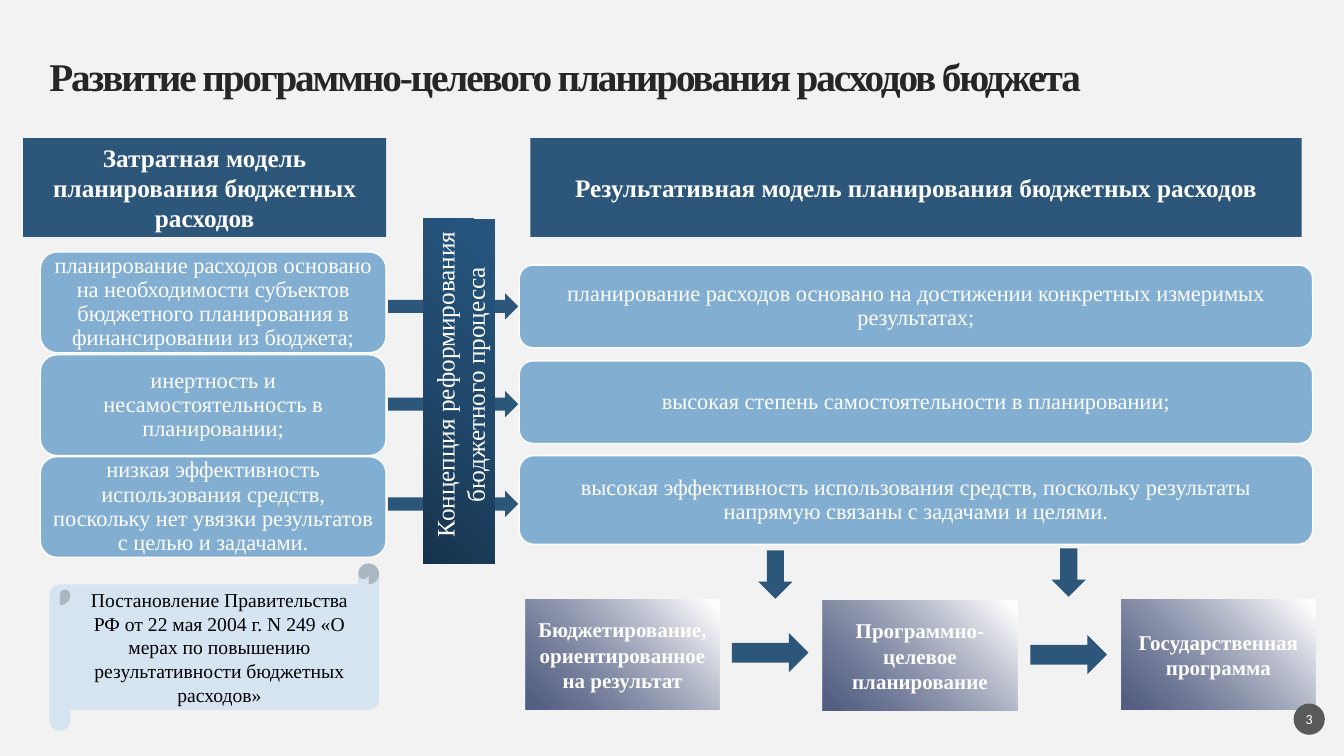
from dataclasses import dataclass

from lxml import etree
from pptx import Presentation
from pptx.dml.color import RGBColor
from pptx.enum.shapes import MSO_SHAPE
from pptx.enum.text import MSO_ANCHOR, MSO_AUTO_SIZE, PP_ALIGN
from pptx.oxml import parse_xml
from pptx.oxml.ns import nsdecls
from pptx.util import Inches, Pt

RECTANGLE = MSO_SHAPE.RECTANGLE
ROUNDED = MSO_SHAPE.ROUNDED_RECTANGLE
RIGHT_ARROW = MSO_SHAPE.RIGHT_ARROW
DOWN_ARROW = MSO_SHAPE.DOWN_ARROW
SCROLL = MSO_SHAPE.HORIZONTAL_SCROLL
OVAL = MSO_SHAPE.OVAL
MIDDLE = MSO_ANCHOR.MIDDLE
CENTER = PP_ALIGN.CENTER
LEFT = PP_ALIGN.LEFT
NO_AUTOFIT = MSO_AUTO_SIZE.NONE


@dataclass(frozen=True)
class Theme:
    background: str = "F2F2F2"
    dark: str = "2C567A"
    light: str = "82AED2"
    scroll: str = "D5E4F0"
    badge: str = "595959"
    white: str = "FFFFFF"
    black: str = "000000"
    title: str = "262626"
    concept_stops: tuple = ((0, "17334C", 100), (50, "20496C", 100), (100, "265680", 100))
    concept_focus: str = 'l="0" t="100000" r="100000" b="0"'
    stage_stops: tuple = ((4, "FFFFFF", 100), (100, "0D1D51", 71))
    stage_focus: str = 'l="100000" t="0" r="0" b="100000"'
    font: str = "Times New Roman"
    number_font: str = "Calibri"
    title_size: int = 28
    heading_size: int = 18
    body_size: int = 16
    stage_size: int = 15
    note_size: int = 14
    number_size: int = 10


theme = Theme()


def write_text(shape, text, size, color=theme.white, font=theme.font, bold=False,
               align=CENTER, line_spacing=1.0, inset=None):
    frame = shape.text_frame
    frame.word_wrap = True
    frame.auto_size = NO_AUTOFIT
    frame.vertical_anchor = MIDDLE
    if inset is not None:
        frame.margin_left = frame.margin_right = Inches(inset)
        frame.margin_top = frame.margin_bottom = Inches(inset)
    paragraph = frame.paragraphs[0]
    paragraph.alignment = align
    paragraph.line_spacing = line_spacing
    run = paragraph.add_run()
    run.text = text
    run.font.name = font
    run.font.size = Pt(size)
    run.font.bold = bold
    run.font.color.rgb = RGBColor.from_string(color)
    return run


def add_box(kind, left, top, width, height, fill=theme.dark, border=None, stops=None, focus=None):
    shape = slide.shapes.add_shape(kind, Inches(left), Inches(top), Inches(width), Inches(height))
    shape.shadow.inherit = False
    if border:
        shape.line.color.rgb = RGBColor.from_string(border)
        shape.line.width = Pt(1)
    else:
        shape.line.fill.background()
    if not stops:
        shape.fill.solid()
        shape.fill.fore_color.rgb = RGBColor.from_string(fill)
        return shape
    gradient = parse_xml(
        f'<a:gradFill {nsdecls("a")} rotWithShape="1"><a:gsLst/>'
        f'<a:path path="circle"><a:fillToRect {focus}/></a:path></a:gradFill>')
    namespace = "{" + gradient.nsmap["a"] + "}"
    for position, color, opacity in stops:
        stop = etree.SubElement(gradient[0], namespace + "gs", pos=str(position * 1000))
        tone = etree.SubElement(stop, namespace + "srgbClr", val=color)
        if opacity < 100:
            etree.SubElement(tone, namespace + "alpha", val=str(opacity * 1000))
    shape._element.spPr.find(namespace + "prstGeom").addnext(gradient)
    return shape


presentation = Presentation()
presentation.slide_width = Inches(13.33)
presentation.slide_height = Inches(7.5)
slide = presentation.slides.add_slide(presentation.slide_layouts[5])
slide.background.fill.solid()
slide.background.fill.fore_color.rgb = RGBColor.from_string(theme.background)

title = slide.shapes.title
title.left, title.top = Inches(0.49), Inches(0.23)
title.width, title.height = Inches(12), Inches(1.11)
title_run = write_text(title, "Развитие программно-целевого планирования расходов бюджета",
                       theme.title_size, color=theme.title, bold=True, align=LEFT,
                       line_spacing=0.9, inset=0)
title_run.font._element.set("spc", "-150")

for top in (2.91, 3.88, 4.87):
    add_box(RIGHT_ARROW, 3.85, top, 1.29, 0.26)

add_box(RECTANGLE, 4.2, 2.17, 0.71, 3.42, stops=theme.concept_stops, focus=theme.concept_focus)
concept = slide.shapes.add_textbox(Inches(2.66), Inches(3.46), Inches(3.8), Inches(0.71))
concept.rotation = 270
write_text(concept, "Концепция реформирования бюджетного процесса", theme.heading_size)

headings = (
    (0.23, 3.6, "Затратная модель планирования бюджетных расходов"),
    (5.26, 7.65, "Результативная модель планирования бюджетных расходов"),
)
for left, width, text in headings:
    heading = add_box(RECTANGLE, left, 1.37, width, 0.98)
    write_text(heading, text, theme.heading_size, bold=True)

features = (
    (0.4, 2.5, 3.43, 1, "планирование расходов основано на необходимости субъектов "
     "бюджетного планирования в финансировании из бюджета;"),
    (0.4, 3.52, 3.43, 1, "инертность и несамостоятельность в планировании;"),
    (0.4, 4.53, 3.43, 1, "низкая эффективность использования средств, "
     "поскольку нет увязки результатов с целью и задачами."),
    (5.15, 2.63, 7.87, 0.82, "планирование расходов основано на достижении "
     "конкретных измеримых результатах;"),
    (5.15, 3.58, 7.87, 0.82, "высокая степень самостоятельности в планировании;"),
    (5.15, 4.52, 7.87, 0.88, "высокая эффективность использования средств, "
     "поскольку результаты напрямую связаны с задачами и целями."),
)
for left, top, width, height, text in features:
    feature = add_box(ROUNDED, left, top, width, height, fill=theme.light, border=theme.white)
    write_text(feature, text, theme.body_size, line_spacing=0.9, inset=0.07)

for left, top in ((7.52, 5.46), (10.43, 5.44)):
    add_box(DOWN_ARROW, left, top, 0.34, 0.48)
for left, top in ((7.26, 6.28), (10.22, 6.3)):
    add_box(RIGHT_ARROW, left, top, 0.76, 0.39)

stages = (
    (5.21, 5.95, "Бюджетирование, ориентированное на результат"),
    (8.16, 5.96, "Программно-целевое планирование"),
    (11.12, 5.95, "Государственная программа"),
)
for left, top, text in stages:
    stage = add_box(RECTANGLE, left, top, 1.93, 1.09,
                    stops=theme.stage_stops, focus=theme.stage_focus)
    write_text(stage, text, theme.stage_size, bold=True)

decree = add_box(SCROLL, 0.49, 5.59, 3.27, 1.66, fill=theme.scroll)
write_text(decree, "Постановление Правительства РФ от 22 мая 2004 г. N 249 «О мерах по повышению "
           "результативности бюджетных расходов»", theme.note_size, color=theme.black)

badge = add_box(OVAL, 12.83, 6.98, 0.31, 0.31, fill=theme.badge)
write_text(badge, "3", theme.number_size, font=theme.number_font, inset=0)

presentation.save("out.pptx")
